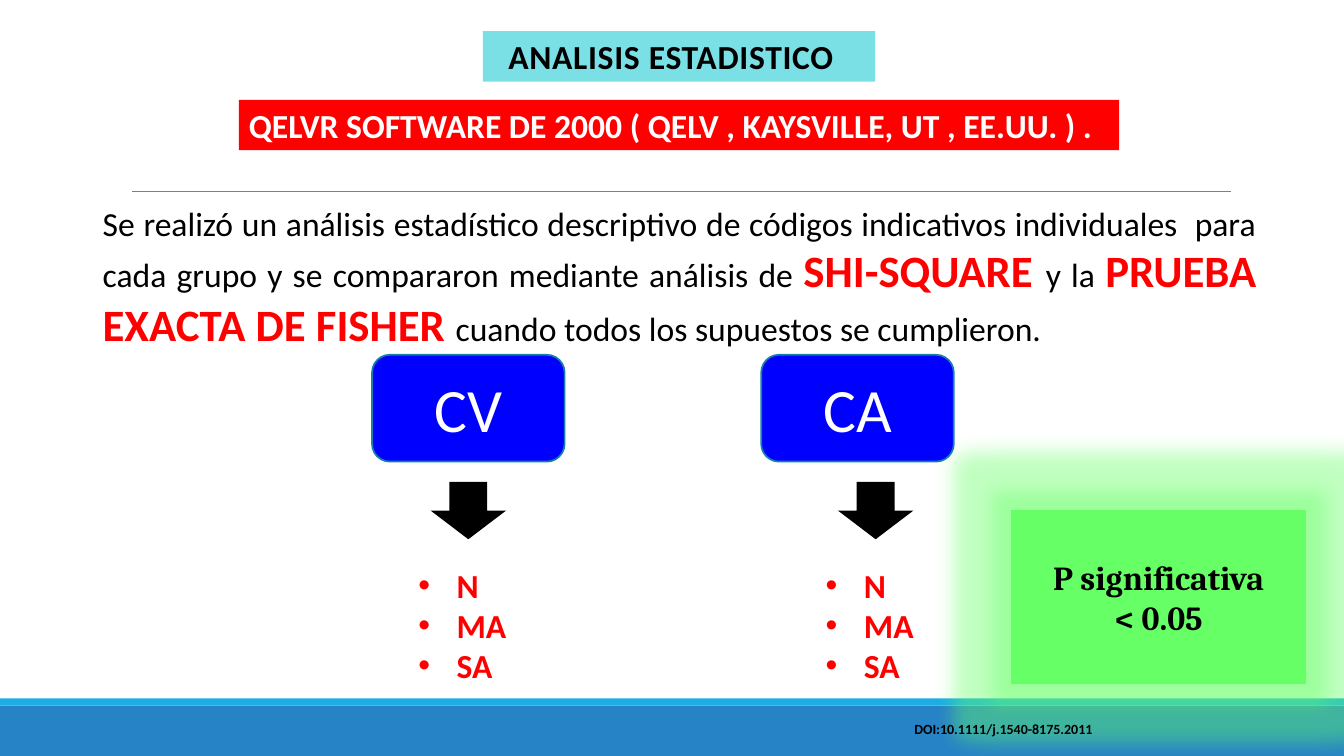
from lxml import etree
from pptx import Presentation
from pptx.dml.color import RGBColor
from pptx.enum.shapes import MSO_CONNECTOR, MSO_SHAPE
from pptx.enum.text import MSO_ANCHOR, PP_ALIGN
from pptx.oxml.ns import qn
from pptx.util import Inches, Pt

RECT, ROUNDED, DOWN = MSO_SHAPE.RECTANGLE, MSO_SHAPE.ROUNDED_RECTANGLE, MSO_SHAPE.DOWN_ARROW
STRAIGHT = MSO_CONNECTOR.STRAIGHT
TOP, MIDDLE = MSO_ANCHOR.TOP, MSO_ANCHOR.MIDDLE
LEFT, CENTER, JUSTIFY = PP_ALIGN.LEFT, PP_ALIGN.CENTER, PP_ALIGN.JUSTIFY

BLACK = RGBColor(0x00, 0x00, 0x00)
WHITE = RGBColor(0xFF, 0xFF, 0xFF)
RED = RGBColor(0xFF, 0x00, 0x00)
BLUE = RGBColor(0x00, 0x00, 0xFF)
TEAL = RGBColor(0x15, 0x80, 0xA9)
AQUA = RGBColor(0x7A, 0xE0, 0xE5)
GREEN = RGBColor(0x66, 0xFF, 0x66)
GRAY = RGBColor(0x80, 0x80, 0x80)
BAND_BLUE = RGBColor(0x26, 0x83, 0xC6)
BAND_CYAN = RGBColor(0x1C, 0xAD, 0xE4)

TITLE = "ANALISIS ESTADISTICO"
SOFTWARE = "QELVR SOFTWARE DE 2000 ( QELV , KAYSVILLE, UT , EE.UU. ) ."
SUMMARY = [
    ("Se realizó un análisis estadístico descriptivo de códigos indicativos individuales  "
     "para cada grupo y se compararon mediante análisis de ", False),
    ("SHI-SQUARE ", True),
    ("y la ", False),
    ("PRUEBA EXACTA DE FISHER ", True),
    ("cuando todos los supuestos se cumplieron.", False),
]
GROUPS = [
    {"name": "CV", "box": 3.69, "arrow": 4.27, "list": 4.05},
    {"name": "CA", "box": 7.55, "arrow": 8.31, "list": 8.09},
]
OUTCOMES = ["N", "MA", "SA"]
SIGNIFICANCE = ["P significativa", "< 0.05"]
DOI = "DOI:10.1111/j.1540-8175.2011"
BANDS = [(7, 0.5, BAND_BLUE), (6.93, 0.07, BAND_CYAN)]


def add_run(paragraph, text, size, color, bold=True, font="Calibri"):
    run = paragraph.add_run()
    run.text = text
    run.font.name = font
    run.font.size = Pt(size)
    run.font.bold = bold
    run.font.color.rgb = color
    return run


def write_lines(shape, lines, size, color, align=LEFT, anchor=TOP, bold=True, font="Calibri"):
    frame = shape.text_frame
    frame.word_wrap = True
    frame.vertical_anchor = anchor
    for index, text in enumerate(lines):
        paragraph = frame.add_paragraph() if index else frame.paragraphs[0]
        paragraph.alignment = align
        add_run(paragraph, text, size, color, bold, font)
    return frame


def add_block(slide, kind, place, fill, line=None, width=0.75):
    block = slide.shapes.add_shape(kind, *map(Inches, place))
    block.shadow.inherit = False
    block.fill.solid()
    block.fill.fore_color.rgb = fill
    if line is None:
        block.line.fill.background()
    else:
        block.line.color.rgb = line
        block.line.width = Pt(width)
    return block


def add_text(slide, place):
    box = slide.shapes.add_textbox(*map(Inches, place))
    box.text_frame.word_wrap = True
    return box


def add_bullet(paragraph):
    properties = paragraph._p.get_or_add_pPr()
    properties.set("marL", str(Inches(0.38)))
    properties.set("indent", str(-Inches(0.38)))
    etree.SubElement(properties, qn("a:buFont")).set("typeface", "Arial")
    etree.SubElement(properties, qn("a:buChar")).set("char", "•")


def add_glow(shape, color, radius, alpha):
    effects = shape._element.spPr.find(qn("a:effectLst"))
    glow = etree.SubElement(effects, qn("a:glow"), rad=str(Inches(radius)))
    tint = etree.SubElement(glow, qn("a:srgbClr"), val=str(color))
    etree.SubElement(tint, qn("a:alpha"), val=str(alpha * 1000))


def main():
    deck = Presentation()
    deck.slide_width, deck.slide_height = Inches(13.33), Inches(7.5)
    slide = deck.slides.add_slide(deck.slide_layouts[5])

    for top, height, color in BANDS:
        add_block(slide, RECT, (0, top, 13.33, height), color)
    divider = slide.shapes.add_connector(
        STRAIGHT, Inches(1.31), Inches(1.9), Inches(12.21), Inches(1.9))
    divider.line.color.rgb = GRAY
    divider.line.width = Pt(0.5)
    etree.SubElement(divider._element.spPr, qn("a:effectLst"))

    summary = add_text(slide, (0.92, 1.96, 11.64, 1.58)).text_frame.paragraphs[0]
    summary.alignment = JUSTIFY
    for text, is_test in SUMMARY:
        add_run(summary, text, 32 if is_test else 24, RED if is_test else BLACK, is_test)

    title = slide.shapes.title
    title.left, title.top = Inches(4.79), Inches(0.31)
    title.width, title.height = Inches(3.89), Inches(0.5)
    title.fill.solid()
    title.fill.fore_color.rgb = AQUA
    title_frame = write_lines(title, [TITLE], 24, BLACK, CENTER)
    title_frame.margin_right = Inches(0.26)
    title_frame.paragraphs[0].runs[0].font._element.set("spc", "50")

    significance = add_block(slide, RECT, (10.03, 5.06, 2.92, 1.72), GREEN, GREEN)
    add_glow(significance, GREEN, 0.39, 40)
    write_lines(significance, SIGNIFICANCE, 24, BLACK, CENTER, MIDDLE, font="Cambria")

    software = add_block(slide, RECT, (2.37, 0.99, 8.73, 0.5), RED)
    write_lines(software, [SOFTWARE], 24, WHITE).word_wrap = False

    for group in GROUPS:
        box = add_block(slide, ROUNDED, (group["box"], 3.52, 1.91, 1.06), BLUE, TEAL, 1.25)
        write_lines(box, [group["name"]], 44, WHITE, CENTER, MIDDLE, bold=False)
        add_block(slide, DOWN, (group["arrow"], 4.78, 0.75, 0.57), BLACK)
        outcomes = add_text(slide, (group["list"], 5.55, 1.95, 1.31))
        for paragraph in write_lines(outcomes, OUTCOMES, 24, RED).paragraphs:
            add_bullet(paragraph)

    write_lines(add_text(slide, (8.97, 7.1, 3.86, 0.27)), [DOI], 10, BLACK)
    deck.save("out.pptx")


if __name__ == "__main__":
    main()
